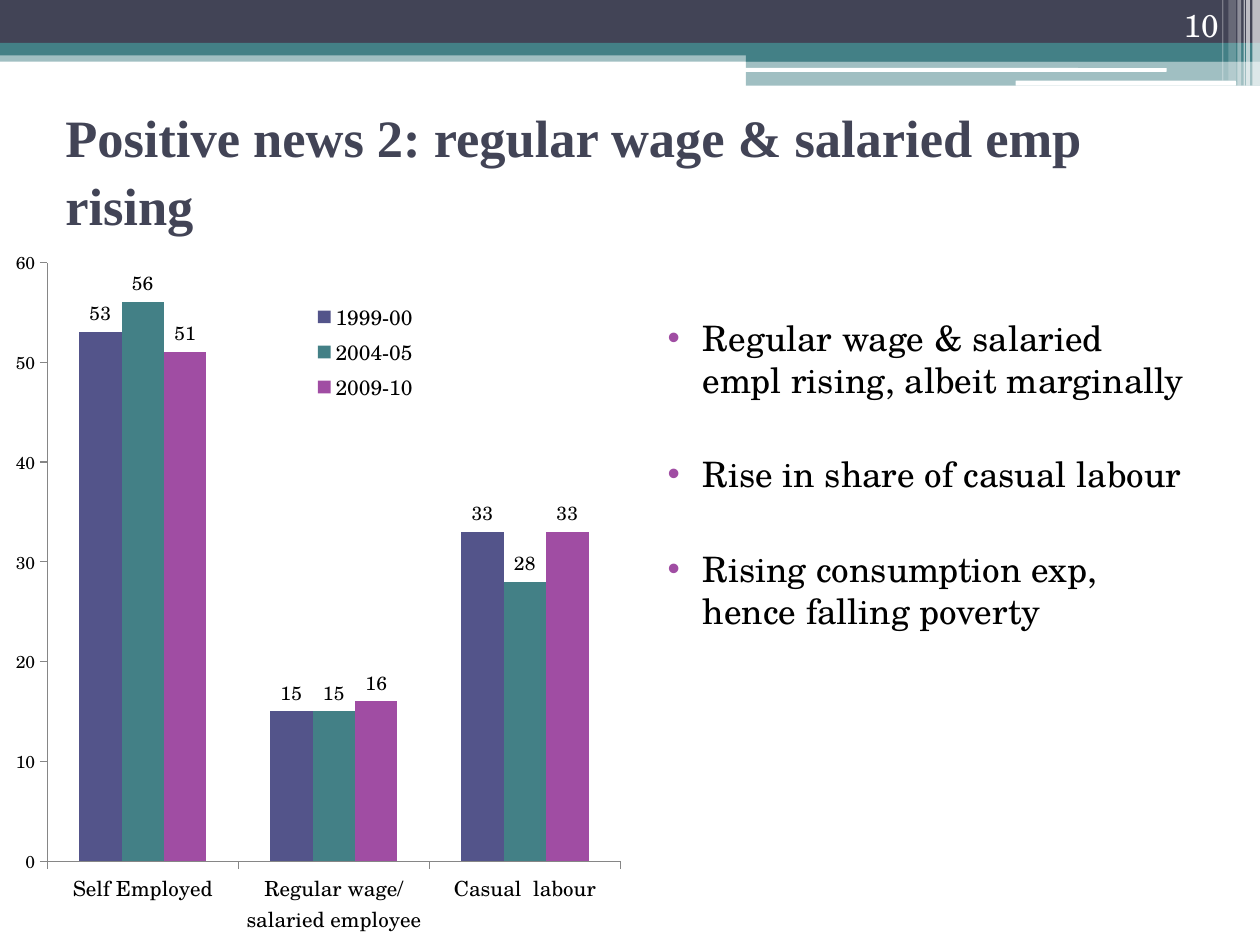
from lxml.etree import SubElement
from pptx import Presentation
from pptx.chart.data import CategoryChartData
from pptx.dml.color import RGBColor
from pptx.enum.chart import XL_CHART_TYPE as ChartType
from pptx.enum.chart import XL_LABEL_POSITION as LabelPosition
from pptx.enum.chart import XL_LEGEND_POSITION as LegendPosition
from pptx.enum.chart import XL_TICK_MARK as TickMark
from pptx.enum.shapes import MSO_SHAPE as Preset
from pptx.enum.text import MSO_ANCHOR as Anchor
from pptx.enum.text import PP_ALIGN as Align
from pptx.oxml.ns import qn
from pptx.util import Inches, Pt

COLORS = {"ink": "424456", "teal": "438086", "indigo": "53548A", "purple": "A04DA3",
          "white": "FFFFFF", "black": "000000", "axis": "868686"}
COLUMNS, ROWS = 100, 75


def rgb(name):
    return RGBColor.from_string(COLORS[name])


def set_all(target, values):
    for name, value in values.items():
        setattr(target, name, value)


class SlideBuilder:
    """Places elements on a grid of 100 columns by 75 rows."""
    body_font = "TeX Gyre Schola"
    title_font = "Times New Roman"

    def __init__(self, presentation):
        self.column = presentation.slide_width / COLUMNS
        self.row = presentation.slide_height / ROWS
        self.slide = presentation.slides.add_slide(presentation.slide_layouts[6])

    def box(self, left, top, width, height):
        return (round(left * self.column), round(top * self.row),
                round(width * self.column), round(height * self.row))

    def style_font(self, font, size, color="black", name=None, bold=False):
        set_all(font, {"size": Pt(size), "name": name or self.body_font, "bold": bold})
        font.color.rgb = rgb(color)

    def band(self, area, color, opacity=100, preset=Preset.RECTANGLE):
        shape = self.slide.shapes.add_shape(preset, *self.box(*area))
        shape.shadow.inherit = False
        shape.line.fill.background()
        shape.fill.solid()
        shape.fill.fore_color.rgb = rgb(color)
        if opacity < 100:
            color_element = shape.fill._xPr.find(".//" + qn("a:srgbClr"))
            SubElement(color_element, qn("a:alpha"), val=str(opacity * 1000))

    def text(self, area, lines, font, anchor=Anchor.TOP, paragraph_format=None, bullet=None):
        frame = self.slide.shapes.add_textbox(*self.box(*area)).text_frame
        set_all(frame, {"word_wrap": True, "vertical_anchor": anchor})
        for index, line in enumerate(lines):
            paragraph = frame.paragraphs[0] if index == 0 else frame.add_paragraph()
            set_all(paragraph, paragraph_format or {})
            run = paragraph.add_run()
            run.text = line
            self.style_font(run.font, **font)
            if bullet:
                self.add_bullet(paragraph, bullet)

    def add_bullet(self, paragraph, color):
        properties = paragraph._p.get_or_add_pPr()
        properties.set("marL", str(Inches(0.4)))
        properties.set("indent", str(Inches(-0.28)))
        bullet_color = SubElement(properties, qn("a:buClr"))
        SubElement(bullet_color, qn("a:srgbClr"), val=COLORS[color])
        SubElement(properties, qn("a:buFont"), typeface="Arial")
        SubElement(properties, qn("a:buChar"), char="•")

    def column_chart(self, area, categories, series, plot_area, legend_area):
        data = CategoryChartData(number_format="0")
        data.categories = categories
        for name, values, _ in series:
            data.add_series(name, values)
        chart = self.slide.shapes.add_chart(
            ChartType.COLUMN_CLUSTERED, *self.box(*area), data).chart
        self.style_font(chart.font, 10)
        set_all(chart, {"has_title": False, "has_legend": True})
        set_all(chart.legend, {"position": LegendPosition.RIGHT, "include_in_layout": False})
        self.style_font(chart.legend.font, 12)
        plot = chart.plots[0]
        set_all(plot, {"gap_width": 150, "overlap": 0, "vary_by_categories": False})
        for plotted, (_, _, color) in zip(plot.series, series):
            plotted.format.fill.solid()
            plotted.format.fill.fore_color.rgb = rgb(color)
            labels = plotted.data_labels
            set_all(labels, {"show_value": True, "number_format": "0",
                             "number_format_is_linked": False,
                             "position": LabelPosition.OUTSIDE_END})
            self.style_font(labels.font, 11)
        for axis, size in ((chart.category_axis, 12), (chart.value_axis, 10)):
            set_all(axis, {"has_major_gridlines": False, "major_tick_mark": TickMark.OUTSIDE,
                           "minor_tick_mark": TickMark.NONE})
            axis.format.line.color.rgb = rgb("axis")
            self.style_font(axis.tick_labels.font, size)
        set_all(chart.value_axis, {"minimum_scale": 0, "maximum_scale": 60, "major_unit": 10})
        set_all(chart.value_axis.tick_labels,
                {"number_format": "0", "number_format_is_linked": False})
        self.set_layout(chart._chartSpace.chart.plotArea, plot_area, inner=True)
        self.set_layout(chart.legend._element, legend_area)

    def set_layout(self, element, shares, inner=False):
        """Fix a chart part at left, top, width and height, as shares of the chart."""
        layout = element.find(qn("c:layout"))
        if layout is None:
            layout = SubElement(element, qn("c:layout"))
            position = element.find(qn("c:legendPos"))
            if position is None:
                element.insert(0, layout)
            else:
                position.addnext(layout)
        manual = SubElement(layout, qn("c:manualLayout"))
        if inner:
            SubElement(manual, qn("c:layoutTarget"), val="inner")
        for tag in ("xMode", "yMode"):
            SubElement(manual, qn("c:" + tag), val="edge")
        for tag, share in zip("xywh", shares):
            SubElement(manual, qn("c:" + tag), val=str(share))


def draw_header(builder):
    bands = [((0, 4, 100, 0.9), "teal", 50), ((0, 0, 100, 3.4), "ink", 100),
             ((0, 3.4, 100, 1), "teal", 100), ((59.2, 3.9, 40.8, 1), "teal", 100),
             ((59.2, 4.8, 40.8, 2), "teal", 50)]
    for area, color, opacity in bands:
        builder.band(area, color, opacity)
    for area in ((59.1, 5.4, 33.5, 0.3), (80.6, 6.4, 17.5, 0.4)):
        builder.band(area, "white", preset=Preset.ROUNDED_RECTANGLE)
    stripes = [(99.4, 0.6, 6.8, 65), (98.9, 0.3, 6.8, 65), (98.7, 0.1, 6.8, 60),
               (98.2, 0.3, 6.8, 40), (97.5, 0.6, 6.4, 20), (97, 0.1, 6.4, 30)]
    for left, width, height, opacity in stripes:
        builder.band((left, 0, width, height), "white", opacity)


def main():
    presentation = Presentation()
    set_all(presentation, {"slide_width": Inches(10), "slide_height": Inches(7.5)})
    builder = SlideBuilder(presentation)
    draw_header(builder)
    builder.text((4.2, 7.5, 90, 11.7), ["Positive news 2: regular wage & salaried emp rising"],
                 {"size": 30, "color": "ink", "name": builder.title_font, "bold": True},
                 Anchor.MIDDLE, {"line_spacing": 1.08})
    builder.text((50.8, 24.6, 44.2, 49.5),
                 ["Regular wage & salaried empl rising, albeit marginally",
                  "Rise in share of casual labour",
                  "Rising consumption exp, hence falling poverty"],
                 {"size": 20}, bullet="purple",
                 paragraph_format={"space_before": Pt(3), "space_after": Pt(27)})
    builder.text((89.4, 0, 8.3, 4), ["10"], {"size": 18, "color": "white"},
                 Anchor.BOTTOM, {"alignment": Align.RIGHT})
    builder.column_chart(
        (0, 19.2, 50, 54.9),
        ["Self Employed", "Regular wage/ salaried employee", "Casual  labour"],
        [("1999-00", (53, 15, 33), "indigo"),
         ("2004-05", (56, 15, 28), "teal"),
         ("2009-10", (51, 16, 33), "purple")],
        plot_area=(0.075, 0.03, 0.91, 0.87), legend_area=(0.49, 0.08, 0.18, 0.16))
    presentation.save("out.pptx")


if __name__ == "__main__":
    main()
